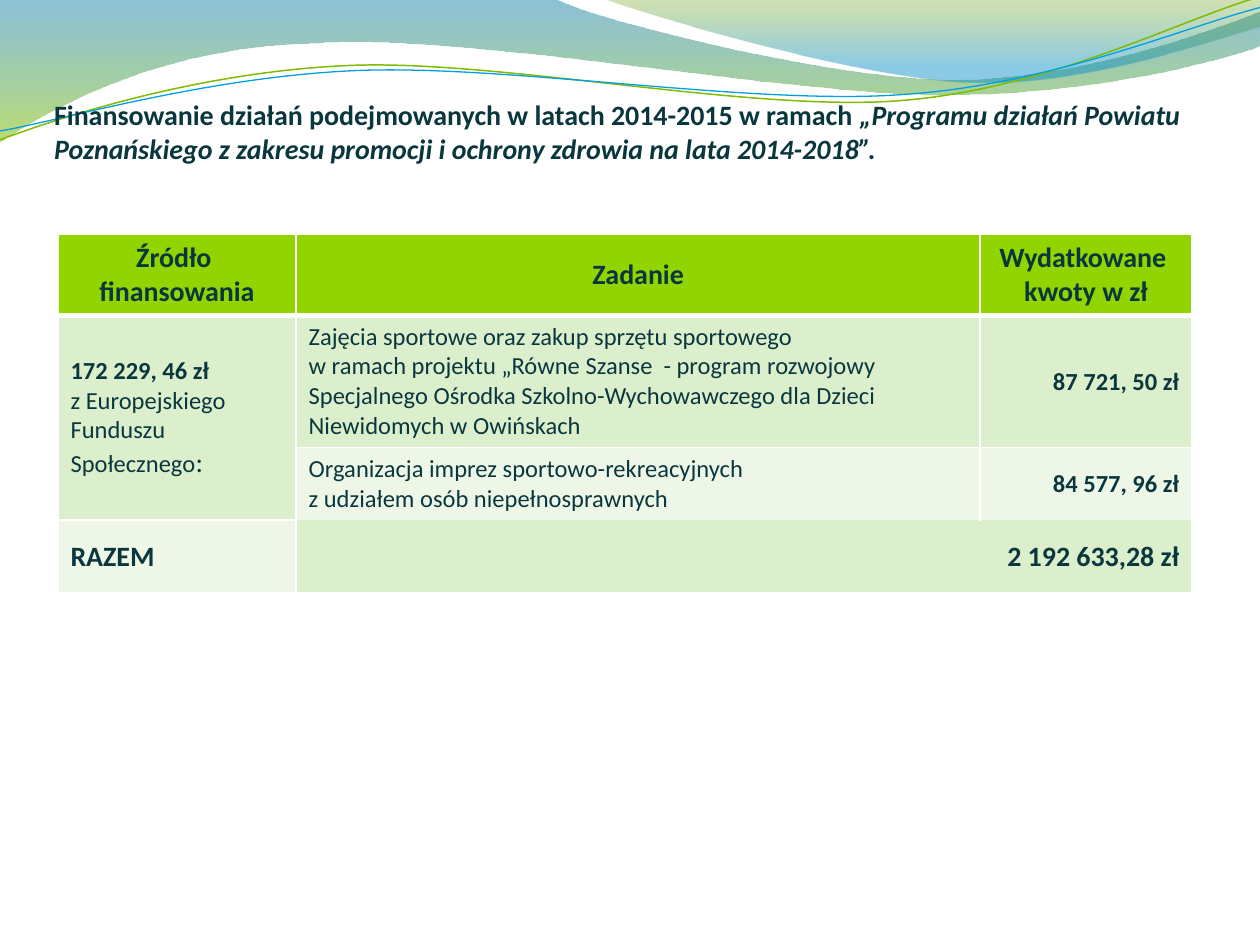
from math import cos, radians, sin

from lxml.etree import SubElement
from pptx import Presentation
from pptx.dml.color import RGBColor
from pptx.enum.text import MSO_ANCHOR as Anchor, PP_ALIGN as Align
from pptx.oxml.ns import qn
from pptx.util import Inches, Pt

FONT = "Calibri"
INK = RGBColor(0x0A, 0x37, 0x3E)
WHITE = RGBColor(0xFF, 0xFF, 0xFF)
HEADER = RGBColor(0x92, 0xD4, 0x00)
BAND = RGBColor(0xDC, 0xEF, 0xCC)
PALE = RGBColor(0xEE, 0xF7, 0xE7)
GREEN = RGBColor(0x81, 0xBB, 0x00)
BLUE = RGBColor(0x00, 0x9F, 0xE3)
DEEP_BLUE = RGBColor(0x00, 0x76, 0xA8)
LIME = RGBColor(0x85, 0xC0, 0x00)
OLIVE = RGBColor(0x6C, 0x9D, 0x00)
SKY = RGBColor(0x00, 0x8C, 0xC8)

COLUMNS = [1.89, 5.43, 1.68]
ROWS = [0.57, 1.05, 0.57, 0, 0.58]
TILT = 357.3
PIVOT = (4.99, 0.58)

WAVES = [
    ([(0, 0), (4.4, -0.01),
      (4.76, 0.17, 6.64, 0.63, 7.58, 0.63), (8.53, 0.63, 9.58, 0.26, 10, 0.09),
      (10.01, 0.36),
      (9.83, 0.44, 8.7, 0.76, 7.46, 0.75), (6.22, 0.75, 3.82, 0.28, 2.57, 0.34),
      (1.29, 0.36, 0.46, 0.83, -0.01, 1.13), (0, 0)],
     [(0, DEEP_BLUE, 45), (1, LIME, 55)]),
    ([(4.79, -0.01),
      (5.09, 0.11, 6.82, 0.62, 7.69, 0.65), (8.56, 0.69, 9.61, 0.32, 10, 0.21),
      (10, 0), (4.79, -0.01)],
     [(0, OLIVE, 30), (0.8, SKY, 45)]),
]
STRANDS = [
    ([(0, 1.11),
      (0.48, 0.93, 1.58, 0.57, 2.77, 0.52), (3.95, 0.47, 5.93, 0.89, 7.13, 0.8),
      (8.33, 0.71, 9.38, 0.15, 9.98, -0.02)], GREEN, 0.85),
    ([(0, 1.04),
      (0.47, 0.96, 1.64, 0.61, 2.83, 0.56), (4.03, 0.51, 5.97, 0.84, 7.17, 0.75),
      (8.36, 0.67, 9.41, 0.21, 10, 0.06)], BLUE, 0.75),
]


def turn(x, y, angle):
    dx, dy = x - PIVOT[0], y - PIVOT[1]
    c, s = cos(radians(angle)), sin(radians(angle))
    return PIVOT[0] + dx * c - dy * s, PIVOT[1] + dx * s + dy * c


def add_outline(page, segments, closed, rotation=0):
    steps = [[tuple(map(Inches, turn(x, y, -rotation)))
              for x, y in zip(segment[::2], segment[1::2])] for segment in segments]
    builder = page.shapes.build_freeform(*steps[0][0])
    builder.add_line_segments([step[-1] for step in steps[1:]], close=closed)
    shape = builder.convert_to_shape()
    lines = list(shape.element.iter(qn("a:lnTo")))
    for line, step in zip(lines, steps[1:]):
        if len(step) == 3:
            line.tag = qn("a:cubicBezTo")
            line.clear()
            for x, y in step:
                SubElement(line, qn("a:pt"), x=str(x - shape.left), y=str(y - shape.top))
    shape.rotation = rotation
    shape.shadow.inherit = False
    return shape


def add_wave(page, segments, stops):
    shape = add_outline(page, segments, True)
    shape.line.fill.background()
    shape.fill.gradient()
    shape.fill.gradient_angle = 270
    for stop, (position, color, opacity) in zip(shape.fill.gradient_stops, stops):
        stop.position = position
        stop.color.rgb = color
    for node, (_, _, opacity) in zip(shape.element.iter(qn("a:srgbClr")), stops):
        SubElement(node, qn("a:alpha"), val=str(opacity * 1000))


def add_strand(page, segments, color, width):
    shape = add_outline(page, segments, False, TILT)
    shape.fill.background()
    shape.line.color.rgb = color
    shape.line.width = Pt(width)


def add_span(para, text, size, bold=False, italic=False):
    for number, line in enumerate(text.split("\n")):
        if number:
            para.add_line_break()
        span = para.add_run()
        span.text = line
        font = span.font
        font.name, font.size, font.bold, font.italic = FONT, Pt(size), bold, italic
        font.color.rgb = INK


def fill_cell(cell, paragraphs, align=Align.LEFT, anchor=Anchor.MIDDLE):
    cell.vertical_anchor = anchor
    frame = cell.text_frame
    for number, spans in enumerate(paragraphs):
        para = frame.add_paragraph() if number else frame.paragraphs[0]
        para.alignment = align
        for span in spans:
            add_span(para, *span)


def style_cell(cell, color, bottom_width):
    properties = cell._tc.get_or_add_tcPr()
    for side, width in (("L", 1), ("R", 1), ("T", 1), ("B", bottom_width)):
        border = SubElement(properties, qn(f"a:ln{side}"), w=str(Pt(width)))
        SubElement(SubElement(border, qn("a:solidFill")), qn("a:srgbClr"), val=str(WHITE))
    cell.fill.solid()
    cell.fill.fore_color.rgb = color


def add_title(page):
    title = page.shapes.title
    title.left, title.top, title.width, title.height = map(Inches, (0.43, 0.76, 9, 0.55))
    frame = title.text_frame
    frame.word_wrap = True
    frame.vertical_anchor = Anchor.BOTTOM
    frame.margin_left = frame.margin_right = frame.margin_bottom = 0
    frame.margin_top = Inches(0.05)
    para = frame.paragraphs[0]
    para.alignment = Align.LEFT
    add_span(para, "Finansowanie działań podejmowanych w latach 2014-2015 w ramach ", 16, True)
    add_span(para, "„Programu działań Powiatu Poznańskiego z zakresu promocji i ochrony "
                   "zdrowia na lata 2014-2018”.", 16, True, True)
    title.element.getparent().append(title.element)


def add_funding_table(page):
    frame = page.shapes.add_table(len(ROWS), len(COLUMNS), Inches(0.46), Inches(1.86),
                                  Inches(sum(COLUMNS)), Inches(sum(ROWS)))
    table = frame.table
    for column, width in zip(table.columns, COLUMNS):
        column.width = Inches(width)
    for row, height in zip(table.rows, ROWS):
        row.height = Inches(height)
    frame.height = Inches(2.91)

    colors = [[HEADER] * 3, [BAND] * 3, [BAND, PALE, PALE], [BAND] * 3, [PALE, BAND, BAND]]
    for r, row_colors in enumerate(colors):
        for c, color in enumerate(row_colors):
            style_cell(table.cell(r, c), color, 1 if r else 3)
    table.cell(1, 0).merge(table.cell(3, 0))
    table.cell(3, 1).merge(table.cell(4, 2))

    headers = [["Źródło \nfinansowania"], ["Zadanie"], ["Wydatkowane ", "kwoty w zł"]]
    for c, lines in enumerate(headers):
        fill_cell(table.cell(0, c), [[(line, 16, True)] for line in lines], Align.CENTER,
                  Anchor.MIDDLE if c == 1 else Anchor.TOP)
    fill_cell(table.cell(1, 0), [
        [("172 229, 46 zł", 14, True)],
        [("z Europejskiego Funduszu Społecznego", 14), (":", 16)],
    ])
    tasks = [
        ("Zajęcia sportowe oraz zakup sprzętu sportowego \nw ramach projektu „Równe Szanse  "
         "- program rozwojowy Specjalnego Ośrodka Szkolno-Wychowawczego dla Dzieci "
         "Niewidomych w Owińskach", "87 721, 50 zł"),
        ("Organizacja imprez sportowo-rekreacyjnych \nz udziałem osób niepełnosprawnych",
         "84 577, 96 zł"),
    ]
    for r, (task, amount) in enumerate(tasks, 1):
        fill_cell(table.cell(r, 1), [[(task, 14)]], anchor=Anchor.TOP)
        fill_cell(table.cell(r, 2), [[(amount, 14, True)]], Align.RIGHT)
    fill_cell(table.cell(3, 1), [[("2 192 633,28 zł", 16, True)]], Align.RIGHT)
    fill_cell(table.cell(4, 0), [[("RAZEM", 16, True)]])


def main():
    deck = Presentation()
    deck.slide_width, deck.slide_height = Inches(10), Inches(7.5)
    page = deck.slides.add_slide(deck.slide_layouts[5])
    for wave in WAVES:
        add_wave(page, *wave)
    for strand in STRANDS:
        add_strand(page, *strand)
    add_title(page)
    add_funding_table(page)
    deck.save("out.pptx")


if __name__ == "__main__":
    main()
